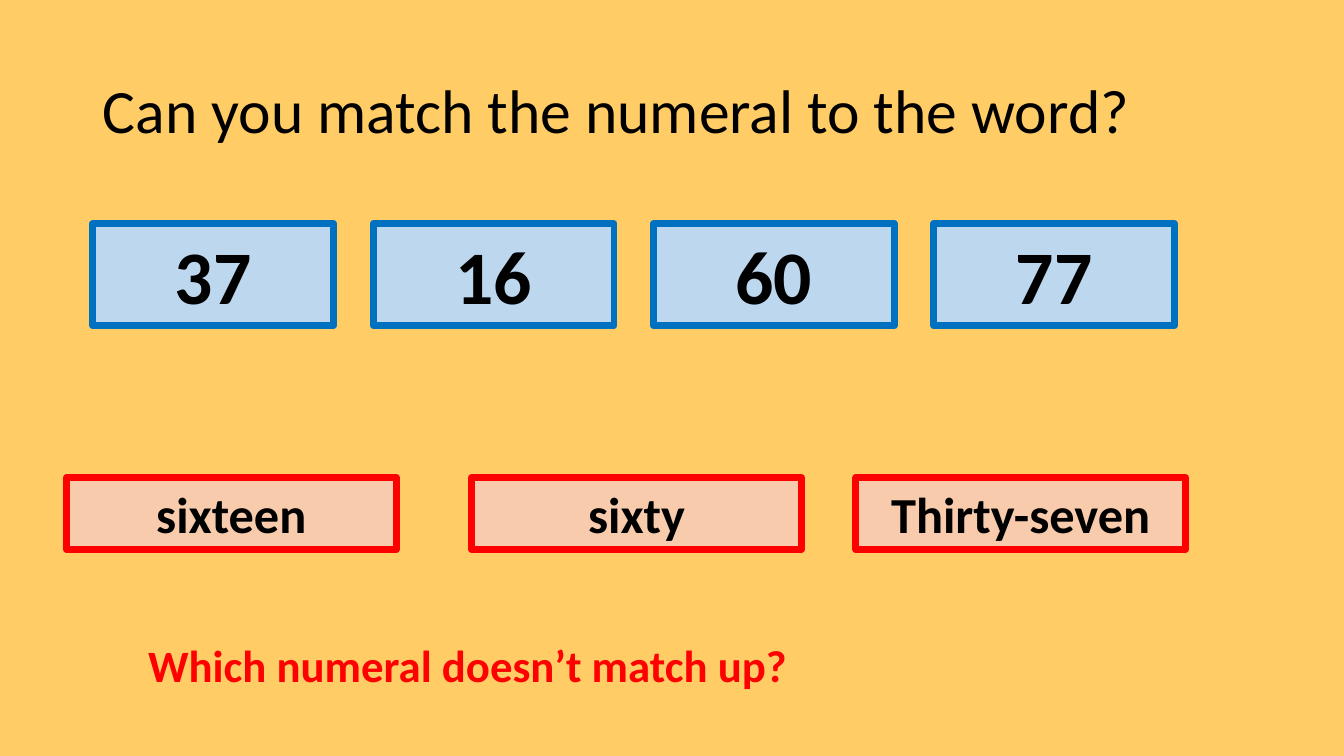
from pptx import Presentation
from pptx.dml.color import RGBColor
from pptx.enum.shapes import MSO_SHAPE
from pptx.enum.text import MSO_ANCHOR, MSO_AUTO_SIZE, PP_ALIGN
from pptx.util import Inches, Pt

NUMERAL = {"fill": "BDD7EE", "line": "0070C0", "size": 54}
WORD = {"fill": "F8CBAD", "line": "FF0000", "size": 36}


def paint(fill, color):
    fill.solid()
    fill.fore_color.rgb = RGBColor.from_string(color)


def place(sp, box):
    for name, value in zip(("left", "top", "width", "height"), box):
        setattr(sp, name, Inches(value))


def write(sp, text, size, color="000000", bold=True, align=PP_ALIGN.LEFT,
          anchor=MSO_ANCHOR.TOP, auto_size=MSO_AUTO_SIZE.SHAPE_TO_FIT_TEXT):
    tf = sp.text_frame
    frame = {"word_wrap": True, "vertical_anchor": anchor, "auto_size": auto_size}
    for name, value in frame.items():
        setattr(tf, name, value)
    p = tf.paragraphs[0]
    p.alignment = align
    r = p.add_run()
    r.text = text
    for name, value in {"name": "Calibri", "size": Pt(size), "bold": bold}.items():
        setattr(r.font, name, value)
    paint(r.font.fill, color)


def add_title(s, box, text):
    sp = s.shapes.title
    place(sp, box)
    write(sp, text, 44, bold=False, anchor=MSO_ANCHOR.MIDDLE,
          auto_size=MSO_AUTO_SIZE.NONE)
    sp.text_frame.paragraphs[0].line_spacing = 0.9


def add_card(s, box, text, style):
    sp = s.shapes.add_shape(MSO_SHAPE.RECTANGLE, *map(Inches, box))
    sp.shadow.inherit = False
    paint(sp.fill, style["fill"])
    paint(sp.line.fill, style["line"])
    sp.line.width = Pt(5)
    write(sp, text, style["size"], align=PP_ALIGN.CENTER)


def add_numerals(s, box, numerals):
    left, top, width, height = box
    card = 2.39
    step = (width - card) / (len(numerals) - 1)
    for i, numeral in enumerate(numerals):
        add_card(s, (left + i * step, top, card, height), numeral, NUMERAL)


def add_words(s, box, words):
    left, top, width, height = box
    for offset, word in words:
        add_card(s, (left + offset, top, width, height), word, WORD)


def add_question(s, box, text):
    sp = s.shapes.add_textbox(*map(Inches, box))
    write(sp, text, 32, "FF0000")


def main():
    prs = Presentation()
    prs.slide_width, prs.slide_height = Inches(13.33), Inches(7.5)
    s = prs.slides.add_slide(prs.slide_layouts[5])
    paint(s.background.fill, "FFCC66")
    add_title(s, (0.92, 0.4, 11.5, 1.45), "Can you match the numeral to the word?")
    add_numerals(s, (0.92, 2.22, 10.73, 1.01), ["37", "16", "60", "77"])
    add_words(s, (0.66, 4.74, 3.27, 0.71),
              [(0, "sixteen"), (4.02, "sixty"), (7.83, "Thirty-seven")])
    add_question(s, (1.37, 6.28, 9.45, 0.64), "Which numeral doesn’t match up?")
    prs.save("out.pptx")


if __name__ == "__main__":
    main()
